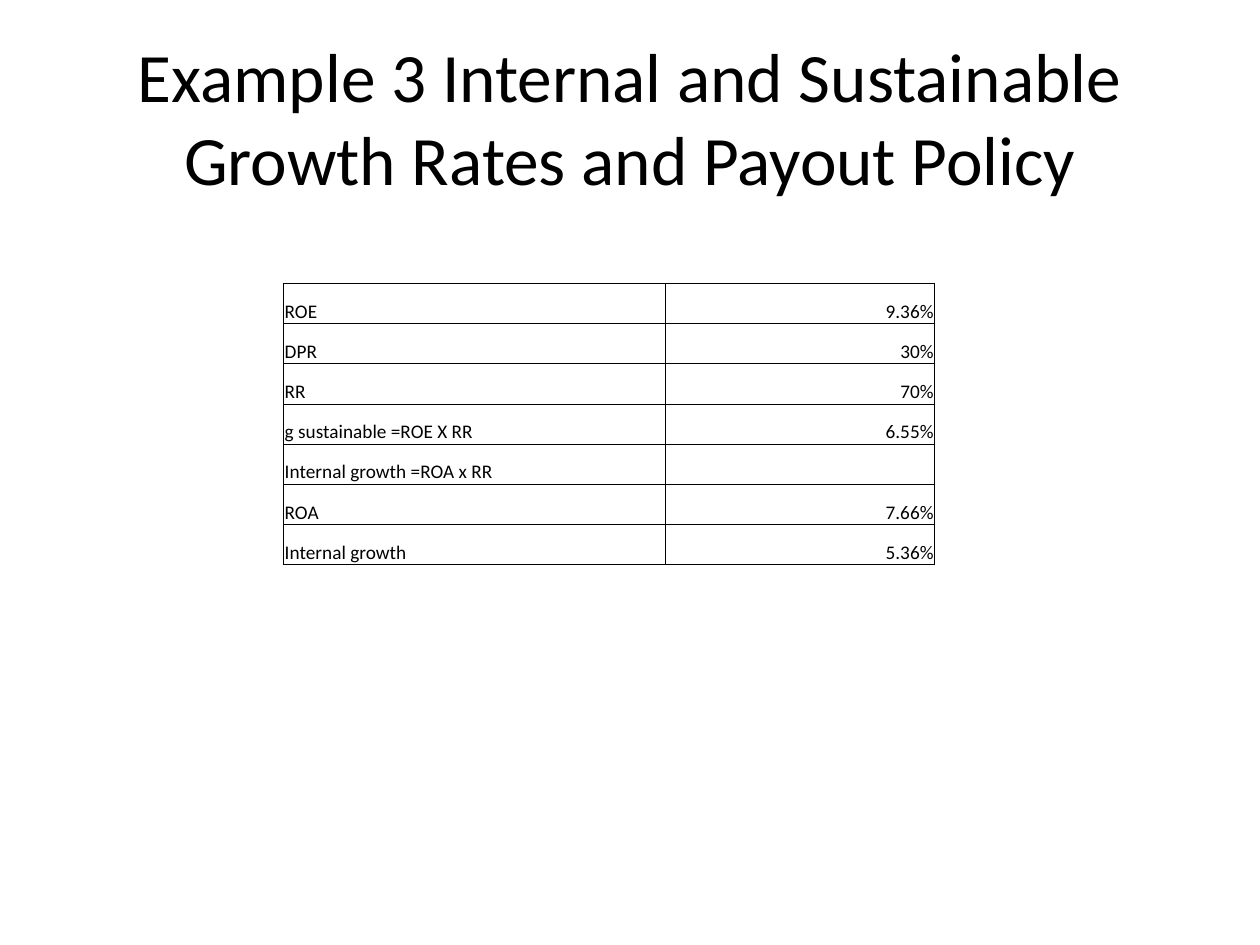
import lxml.etree
import pptx
import pptx.dml.color
import pptx.enum.text
import pptx.oxml.ns
import pptx.util

Inches = pptx.util.Inches
Pt = pptx.util.Pt
ALIGN = pptx.enum.text.PP_ALIGN
ANCHOR = pptx.enum.text.MSO_ANCHOR
qn = pptx.oxml.ns.qn

BLACK = pptx.dml.color.RGBColor(0x00, 0x00, 0x00)
FONT = "Calibri"

TITLE = "Example 3 Internal and Sustainable Growth Rates and Payout Policy"
GROWTH_RATES = [
    ("ROE", "9.36%"),
    ("DPR", "30%"),
    ("RR", "70%"),
    ("g sustainable =ROE X RR", "6.55%"),
    ("Internal growth =ROA x RR", ""),
    ("ROA", "7.66%"),
    ("Internal growth", "5.36%"),
]
COLUMN_WIDTHS = (3.03, 2.14)
COLUMN_ALIGNS = (ALIGN.LEFT, ALIGN.RIGHT)


def write_text(paragraph, text, size, align):
    paragraph.alignment = align
    run = paragraph.add_run()
    run.text = text
    run.font.name = FONT
    run.font.size = Pt(size)
    run.font.color.rgb = BLACK


def add_title(slide, left, top, width, height):
    title = slide.shapes.add_textbox(
        Inches(left), Inches(top), Inches(width), Inches(height)).text_frame
    title.word_wrap = True
    title.vertical_anchor = ANCHOR.MIDDLE
    write_text(title.paragraphs[0], TITLE, 39.6, ALIGN.CENTER)


def outline_cell(cell, width):
    """Draw all four borders; they must come before the cell's fill."""
    properties = cell._tc.get_or_add_tcPr()
    for position, side in enumerate(("a:lnL", "a:lnR", "a:lnT", "a:lnB")):
        border = lxml.etree.Element(qn(side), w=str(Pt(width)))
        fill = lxml.etree.SubElement(border, qn("a:solidFill"))
        lxml.etree.SubElement(fill, qn("a:srgbClr"), val=str(BLACK))
        properties.insert(position, border)


def add_growth_table(slide, left, top, width, height):
    table = slide.shapes.add_table(
        len(GROWTH_RATES), len(COLUMN_WIDTHS),
        Inches(left), Inches(top), Inches(width), Inches(height)).table
    table.first_row = False
    table.horz_banding = False
    for column, column_width in zip(table.columns, COLUMN_WIDTHS):
        column.width = Inches(column_width)

    for row, texts in enumerate(GROWTH_RATES):
        for column, (text, align) in enumerate(zip(texts, COLUMN_ALIGNS)):
            cell = table.cell(row, column)
            cell.fill.background()
            cell.vertical_anchor = ANCHOR.BOTTOM
            cell.margin_left = cell.margin_right = cell.margin_top = Inches(0.01)
            cell.margin_bottom = 0
            outline_cell(cell, 0.5)
            if text:
                write_text(cell.text_frame.paragraphs[0], text, 11, align)


def main():
    presentation = pptx.Presentation()
    presentation.slide_width = Inches(10)
    presentation.slide_height = Inches(7.5)
    slide = presentation.slides.add_slide(presentation.slide_layouts[6])

    # Heading
    add_title(slide, 0.5, 0.3, 9, 1.25)
    # Growth rate figures
    add_growth_table(slide, 2.25, 2.25, sum(COLUMN_WIDTHS), 2.23)

    presentation.save("out.pptx")


if __name__ == "__main__":
    main()
